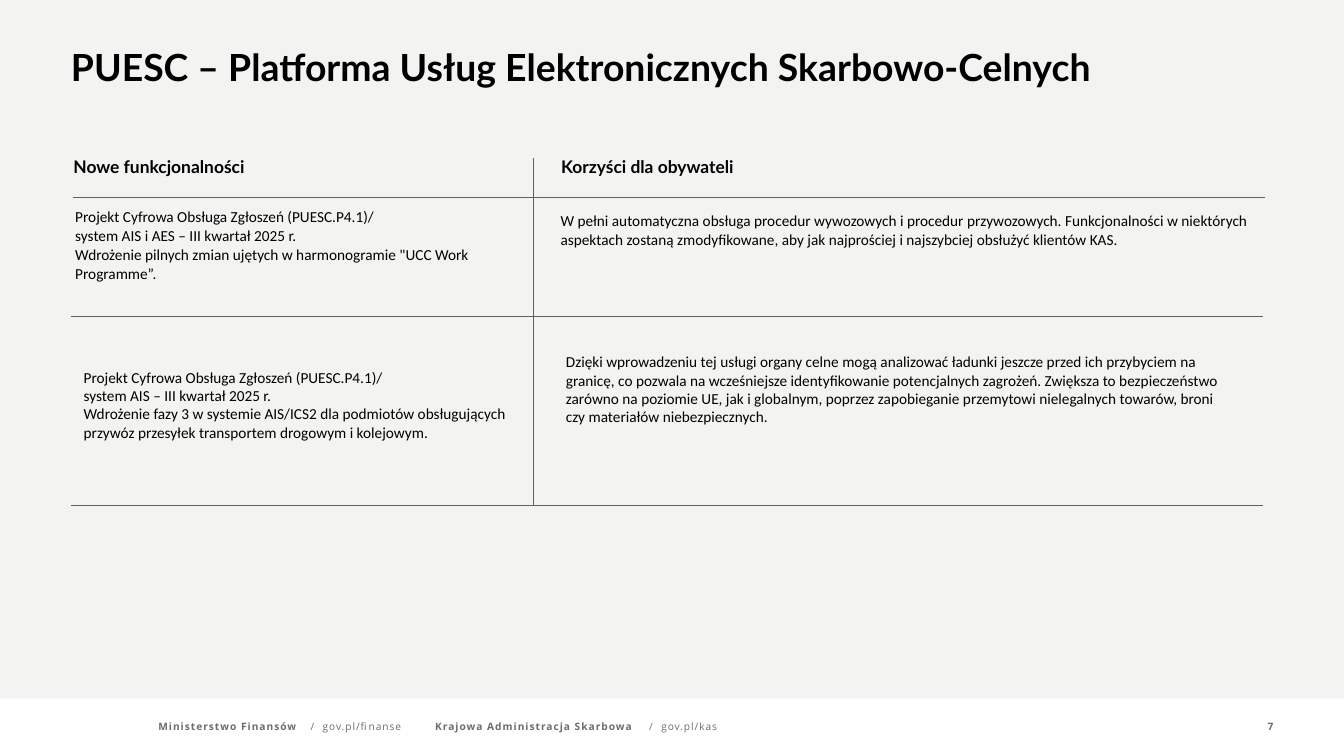
from dataclasses import dataclass

from lxml.etree import SubElement
from pptx import Presentation
from pptx.dml.color import RGBColor as RGB
from pptx.enum.shapes import MSO_CONNECTOR as LINE, MSO_SHAPE as SHAPE
from pptx.enum.text import MSO_ANCHOR as ANCHOR, MSO_AUTO_SIZE as FIT, PP_ALIGN as ALIGN
from pptx.oxml.ns import qn
from pptx.util import Inches, Pt


@dataclass(frozen=True)
class Theme:
    """Colours, type styles and insets of the slide."""
    page = RGB(0xFF, 0xFF, 0xFF)
    panel = RGB(0xF3, 0xF3, 0xF2)
    ink = RGB(0, 0, 0)
    rule = RGB(0x5D, 0x61, 0x62)
    muted = RGB(0x69, 0x6D, 0x6E)
    title = {"name": "Lato", "size": Pt(44), "bold": True}
    head = {"name": "Lato", "size": Pt(20.5), "bold": True}
    body = {"name": "Calibri", "size": Pt(18), "bold": False}
    foot = {"name": "Open Sans", "size": Pt(12), "bold": True}
    padded = (0.1, 0.05)


T = Theme()
W, H = 21.99, 12.37
TITLE = (5.28, 5.74, 87.09, 6.06)
TABLE = (5.28, 20.94, 88.72, 45.92)
FOOTER = (0, 92.4, 100, 7.6)
COLUMN_RULE = 34.38
ROW_RULES = ((0.14, 5.09), (0, 20.94), (0, 45.92))
HEADS = (
    ("Nowe funkcjonalności", (0.18, -0.4, 18, 3)),
    ("Korzyści dla obywateli", (36.47, -0.4, 18.8, 3)),
)
TIGHT = {"line_spacing": Pt(21.8)}
CELLS = (
    (("Projekt Cyfrowa Obsługa Zgłoszeń (PUESC.P4.1)/\vsystem AIS i AES – III kwartał 2025 r.",
      "Wdrożenie pilnych zmian ujętych w harmonogramie \"UCC Work Programme”."),
     (0.32, 6.39, 34.11, 10.1), (0, 0.01), {**TIGHT, "space_before": Pt(1)}),
    (("W pełni automatyczna obsługa procedur wywozowych i procedur przywozowych. "
      "Funkcjonalności w niektórych aspektach zostaną zmodyfikowane, aby jak najprościej "
      "i najszybciej obsłużyć klientów KAS.",),
     (36.43, 6.95, 53.07, 5), (0, 0.01), TIGHT),
    (("Projekt Cyfrowa Obsługa Zgłoszeń (PUESC.P4.1)/\vsystem AIS – III kwartał 2025 r.",
      "Wdrożenie fazy 3 w systemie AIS/ICS2 dla podmiotów obsługujących przywóz przesyłek "
      "transportem drogowym i kolejowym."),
     (0.5, 27.32, 33.65, 10.59), T.padded, {}),
    (("Dzięki wprowadzeniu tej usługi organy celne mogą analizować ładunki jeszcze przed ich "
      "przybyciem na granicę, co pozwala na wcześniejsze identyfikowanie potencjalnych zagrożeń. "
      "Zwiększa to bezpieczeństwo zarówno na poziomie UE, jak i globalnym, poprzez zapobieganie "
      "przemytowi nielegalnych towarów, broni czy materiałów niebezpiecznych.",),
     (36.38, 25.3, 49.98, 10.59), T.padded, {}),
)
SOURCES = (
    ("Ministerstwo Finansów", "gov.pl/finanse", (11.78, 2.67, 18.55, 2.1), 2.49),
    ("Krajowa Administracja Skarbowa", "gov.pl/kas", (32.38, 2.67, 21.33, 2.1), 3.5),
)
PAGE_BOX = (94.32, 2.67, 0.91, 2.1)


def apply(obj, values):
    """Set every attribute named in values."""
    for name, value in values.items():
        setattr(obj, name, value)


def inside(region, box):
    """Shift a box by the corner of its region."""
    return region[0] + box[0], region[1] + box[1], *box[2:]


def place(box):
    """Turn hundredths of the slide into lengths."""
    return [Inches(v * side / 100) for v, side in zip(box, (W, H, W, H))]


def style_runs(p, font, color):
    """Give every run of a paragraph one font and colour."""
    for r in p.runs:
        apply(r.font, font)
        r.font.color.rgb = color


def fill_text(sp, paragraphs, font, color=T.ink, inset=(0, 0.02), para=None):
    """Write styled paragraphs into a shape."""
    tf = sp.text_frame
    x, y = map(Inches, inset)
    apply(tf, {"word_wrap": True, "auto_size": FIT.NONE, "vertical_anchor": ANCHOR.TOP,
               "margin_left": x, "margin_right": x, "margin_top": y, "margin_bottom": y})
    for i, text in enumerate(paragraphs):
        p = tf.add_paragraph() if i else tf.paragraphs[0]
        p.text = text
        apply(p, {"alignment": ALIGN.LEFT, **(para or {})})
        style_runs(p, font, color)
    return tf


def add_text(s, box, *args, **kwargs):
    """Add a text box and fill it."""
    return fill_text(s.shapes.add_textbox(*place(box)), *args, **kwargs)


def add_rule(s, box):
    """Add a thin straight rule along a box."""
    x, y, w, h = place(box)
    line = s.shapes.add_connector(LINE.STRAIGHT, x, y, x + w, y + h)
    line.line.color.rgb = T.rule
    line.line.width = Pt(0.25)
    SubElement(line.element.spPr, qn("a:effectLst"))


def add_panel(s, box):
    """Put the grey panel behind the title."""
    sp = s.shapes.add_shape(SHAPE.RECTANGLE, *place(box))
    sp.shadow.inherit = False
    sp.fill.solid()
    sp.fill.fore_color.rgb = T.panel
    sp.line.fill.background()
    s.shapes.title.element.addprevious(sp.element)


def add_title(s, box, text):
    """Place and format the title placeholder."""
    sp = s.shapes.title
    apply(sp, dict(zip(("left", "top", "width", "height"), place(box))))
    fill_text(sp, [text], T.title, inset=(0, 0.01),
              para={"space_before": Pt(0.9), "line_spacing": 1.0})


def add_comparison(s, region):
    """Draw the two columns with their rules, heads and cells."""
    for x, y in ROW_RULES:
        add_rule(s, inside(region, (x, y, region[2], 0)))
    add_rule(s, inside(region, (COLUMN_RULE, 0, 0, region[3])))
    for text, box in HEADS:
        add_text(s, inside(region, box), [text], T.head, para={"space_before": Pt(1.1)})
    for paragraphs, box, inset, para in CELLS:
        add_text(s, inside(region, box), paragraphs, T.body, inset=inset, para=para)


def add_footer(s, region, number):
    """Write the two sources and the page number."""
    look = {"font": T.foot, "color": T.muted, "inset": (0, 0.03),
            "para": {"space_before": Pt(2.2)}}
    for owner, address, box, tab in SOURCES:
        p = add_text(s, inside(region, box), [owner + "\t"], **look).paragraphs[0]
        for text in ("/\t", address):
            p.add_run().text = text
        style_runs(p, T.foot, T.muted)
        for r, spacing, bold in zip(p.runs, (120, -50, 110), (True, False, False)):
            r.font.bold = bold
            r.font.element.set("spc", str(spacing)) if hasattr(r.font, "element") else \
                r._r.get_or_add_rPr().set("spc", str(spacing))
        tabs = SubElement(p._p.get_or_add_pPr(), qn("a:tabLst"))
        for stop in (tab, tab + 0.2):
            SubElement(tabs, qn("a:tab"), pos=str(Inches(stop)), algn="l")
    add_text(s, inside(region, PAGE_BOX), [number], **look)


def main():
    """Build and save the slide."""
    prs = Presentation()
    apply(prs, {"slide_width": Inches(W), "slide_height": Inches(H)})
    s = prs.slides.add_slide(prs.slide_layouts[5])
    s.background.fill.solid()
    s.background.fill.fore_color.rgb = T.page
    add_panel(s, (0, 0, 100, FOOTER[1]))
    add_title(s, TITLE, "PUESC – Platforma Usług Elektronicznych Skarbowo-Celnych")
    add_comparison(s, TABLE)
    add_footer(s, FOOTER, "7")
    prs.save("out.pptx")


if __name__ == "__main__":
    main()
